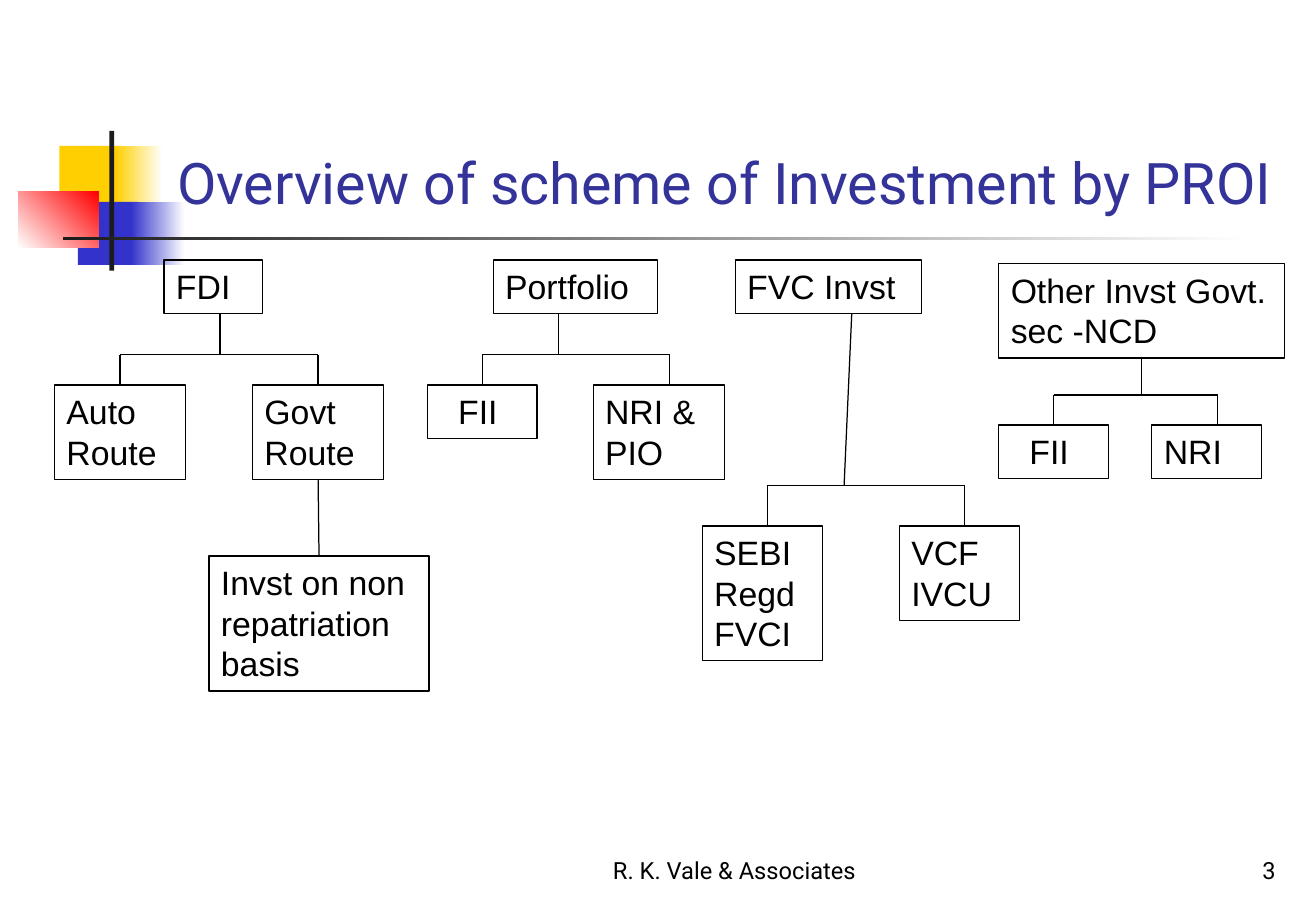
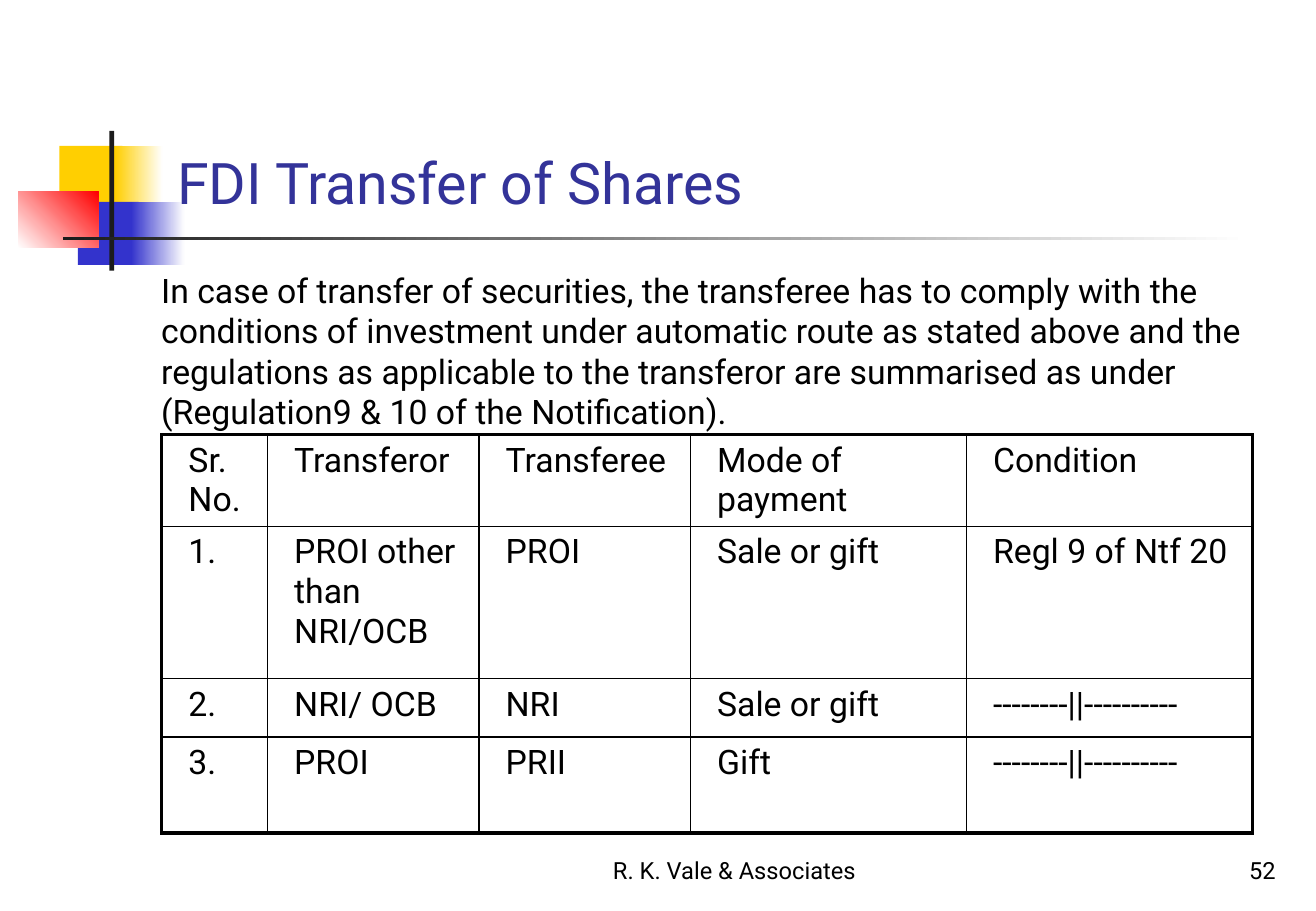
from lxml.etree import SubElement
from pptx import Presentation
from pptx.dml.color import RGBColor as Rgb
from pptx.enum.shapes import MSO_CONNECTOR as Conn, MSO_SHAPE as Shape
from pptx.enum.text import MSO_ANCHOR as Anchor, MSO_AUTO_SIZE as Auto, PP_ALIGN as Align
from pptx.oxml.ns import qn
from pptx.util import Cm, Pt

HUES = {"ink": "000000", "title": "333399", "gold": "FFCF01", "blue": "3333CC",
        "red": "FF0000", "dark": "1C1C1C", "white": "FFFFFF"}
BODY = {"name": "Roboto", "size": Pt(20)}
NODE = {"name": "Arial", "size": Pt(20)}
FOOT = {"name": "Roboto", "size": Pt(14)}
HEAD = {"name": "Roboto", "size": Pt(34)}
FIRM = "R. K. Vale & Associates"

# left, top, width, height, colours, gradient angle
DECOR = [
    (1.24, 3.05, 1.32, 1.32, ["gold"], 0),
    (2.41, 3.05, 0.99, 1.32, ["gold", "white"], 0),
    (1.63, 4.22, 1.27, 1.32, ["blue"], 0),
    (2.74, 4.22, 1.12, 1.32, ["blue", "white"], 0),
    (0.38, 4.01, 1.68, 1.17, ["white", "red"], 45),
    (2.29, 2.74, 0.1, 2.92, ["dark"], 0),
    (1.32, 4.95, 24.77, 0.08, ["dark", "white"], 0),
]

# Node: text, left, top, width, number of lines, extra indent
# Tree: root, stem shift at top, stem foot shift, bus height, [(node, drop shift)]
TALL = {1: 1.12, 2: 1.98, 3: 2.82}
TREES = [
    (("FDI", 3.43, 5.44, 2.06, 1, 0), 0.14, 0.14, 7.42, [
        (("Auto Route", 1.14, 8.05, 2.74, 2, 0), 0),
        (("Govt Route", 5.28, 8.05, 2.74, 2, 0), 0)]),
    (("Portfolio", 10.31, 5.44, 3.43, 1, 0), -0.35, -0.35, 7.42, [
        (("FII", 8.94, 8.05, 2.29, 1, 0.39), 0),
        (("NRI & PIO", 12.4, 8.05, 2.74, 2, 0), 0.23)]),
    (("FVC Invst", 15.37, 5.44, 3.89, 1, 0), 0.49, 0.33, 10.16, [
        (("SEBI Regd FVCI", 14.68, 11, 2.51, 3, 0), 0.11),
        (("VCF IVCU", 18.8, 11, 2.51, 2, 0), 0.11)]),
    (("Other Invst Govt. sec -NCD", 20.88, 5.51, 5.97, 2, 0), 0, 0, 8.26, [
        (("FII", 20.88, 8.89, 2.29, 1, 0.39), 0),
        (("NRI", 24.08, 8.89, 2.29, 1, 0), 0.23)]),
]
LEAF = ("Invst on non repatriation basis", 4.37, 11.63, 4.6, 3, 0)

INTRO = ("In case of transfer of securities, the transferee has to comply with the "
         "conditions of investment under automatic route as stated above and the "
         "regulations as applicable to the transferor are summarised as under "
         "(Regulation9 & 10 of the Notification).")
COLS = [2.21, 4.42, 4.42, 5.77, 5.99]
ROWS = [1.92, 3.18, 1.22, 2.01]
DITTO = "--------||----------"
CELLS = [
    ["Sr. No.", "Transferor", "Transferee", "Mode of payment", "Condition"],
    ["1.", "PROI other than NRI/OCB", "PROI", "Sale or gift", "Regl 9 of Ntf 20"],
    ["2.", "NRI/ OCB", "NRI", "Sale or gift", DITTO],
    ["3.", "PROI", "PRII", "Gift", DITTO],
]


def hue(key):
    return Rgb.from_string(HUES[key])


def write(frame, text, font, color="ink", align=Align.LEFT, anchor=Anchor.TOP):
    frame.word_wrap = True
    frame.auto_size = Auto.NONE
    frame.vertical_anchor = anchor
    para = frame.paragraphs[0]
    para.alignment = align
    run = para.add_run()
    run.text = text
    for key, value in font.items():
        setattr(run.font, key, value)
    run.font.color.rgb = hue(color)


def rect(slide, *area):
    shape = slide.shapes.add_shape(Shape.RECTANGLE, *map(Cm, area))
    shape.shadow.inherit = False
    return shape


def decorate(slide):
    """Draw the title ornament and move it to the layout that all slides share."""
    for *area, keys, angle in DECOR:
        shape = rect(slide, *area)
        shape.line.fill.background()
        if len(keys) == 1:
            shape.fill.solid()
            shape.fill.fore_color.rgb = hue(keys[0])
        else:
            shape.fill.gradient()
            shape.fill.gradient_angle = angle
            for stop, key in zip(shape.fill.gradient_stops, keys):
                stop.color.rgb = hue(key)
        slide.slide_layout.shapes.element.append(shape.element)


def label(slide, area, *args, **style):
    box = slide.shapes.add_textbox(*map(Cm, area))
    write(box.text_frame, *args, **style)


def start(deck, title, number):
    """Add a slide with its title and footers."""
    slide = deck.slides.add_slide(deck.slide_layouts[5])
    head = slide.shapes.title
    head.left, head.top, head.width, head.height = map(Cm, (3.45, 0.58, 23.44, 4.06))
    write(head.text_frame, title, HEAD, "title", anchor=Anchor.BOTTOM)
    label(slide, (11, 17.35, 8.71, 1.27), FIRM, FOOT, align=Align.CENTER, anchor=Anchor.BOTTOM)
    label(slide, (21.18, 17.35, 5.74, 1.27), number, FOOT, align=Align.RIGHT, anchor=Anchor.BOTTOM)
    return slide


def node(slide, text, left, top, width, lines, indent):
    box = rect(slide, left, top, width, TALL[lines])
    box.fill.background()
    box.line.color.rgb = hue("ink")
    box.line.width = Pt(0.75)
    write(box.text_frame, text, NODE)
    box.text_frame.margin_left = Cm(0.25 + indent)
    return box


def line(slide, x1, y1, x2, y2, above=None, below=None):
    """Draw a line, joined to the box above or below where one is given."""
    link = slide.shapes.add_connector(Conn.STRAIGHT, x1, y1, x2, y2)
    link.line.color.rgb = hue("ink")
    link.line.width = Pt(0.75)
    SubElement(link.element.spPr, qn("a:effectLst"))
    if above is not None:
        link.begin_connect(above, 2)
    if below is not None:
        link.end_connect(below, 0)


def mid(box, shift=0):
    return box.left + box.width // 2 + Cm(shift)


def tree(slide, root, tip, foot, bus, kids):
    top = node(slide, *root)
    bus = Cm(bus)
    line(slide, mid(top, tip), top.top + top.height, mid(top, foot), bus,
         above=None if tip else top)
    boxes, ends = [], []
    for kid, shift in kids:
        box = node(slide, *kid)
        x = mid(box, shift)
        line(slide, x, bus, x, box.top, below=None if shift else box)
        boxes.append(box)
        ends.append(x)
    line(slide, ends[0], bus, ends[-1], bus)
    return boxes


def edge(cell, side, width):
    ln = SubElement(cell._tc.get_or_add_tcPr(), qn("a:ln" + side), w=str(Pt(width)))
    fill = SubElement(ln, qn("a:solidFill"))
    SubElement(fill, qn("a:srgbClr"), val=HUES["ink"])


def grid(slide):
    area = map(Cm, (3.38, 9.09, sum(COLS), sum(ROWS)))
    table = slide.shapes.add_table(len(ROWS), len(COLS), *area).table
    table.first_row = table.horz_banding = False
    for col, width in zip(table.columns, COLS):
        col.width = Cm(width)
    for r, texts in enumerate(CELLS):
        table.rows[r].height = Cm(ROWS[r])
        for c, text in enumerate(texts):
            cell = table.cell(r, c)
            outer = {"L": c == 0, "R": c == len(COLS) - 1,
                     "T": r == 0, "B": r == len(ROWS) - 1}
            for side, thick in outer.items():
                edge(cell, side, 2.25 if thick else 1)
            cell.fill.background()
            cell.margin_left = Cm(0.56)
            write(cell.text_frame, text, BODY)


def main():
    deck = Presentation()
    deck.slide_width, deck.slide_height = Cm(27.51), Cm(19.05)

    slide = start(deck, "Overview of scheme of Investment by PROI", "3")
    decorate(slide)
    groups = [tree(slide, *item) for item in TREES]
    govt = groups[0][1]
    leaf = node(slide, *LEAF)
    line(slide, mid(govt), govt.top + govt.height, mid(leaf), leaf.top, govt, leaf)

    slide = start(deck, "FDI Transfer of Shares", "52")
    label(slide, (3.12, 5.51, 23.09, 3.6), INTRO, BODY)
    grid(slide)
    deck.save("out.pptx")


if __name__ == "__main__":
    main()
